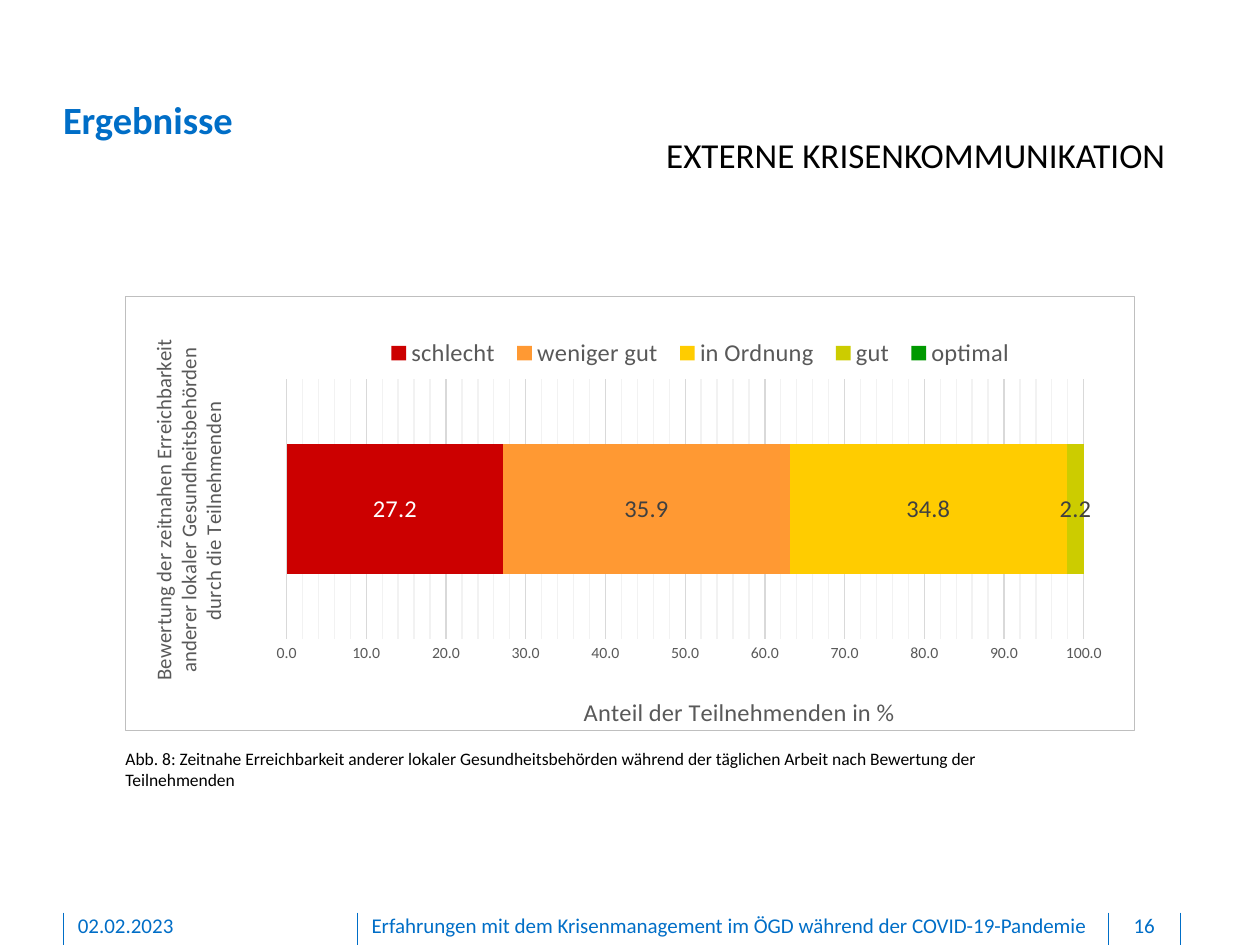
from lxml import etree
from pptx import Presentation
from pptx.chart.data import CategoryChartData
from pptx.dml.color import RGBColor
from pptx.enum import chart as ch, shapes, text
from pptx.oxml import ns
from pptx.util import Cm, Pt

FONT = "Calibri"
COLORS = {
    "blue": "006EC7", "black": "000000", "white": "FFFFFF",
    "label": "404040", "axis": "595959", "border": "BFBFBF",
    "grid": "D9D9D9", "minor": "F2F2F2",
}
# Name, value, bar colour, label colour
RATINGS = [
    ("schlecht", 27.2, "CC0000", "white"),
    ("weniger gut", 35.9, "FF9933", "label"),
    ("in Ordnung", 34.8, "FFCC00", "label"),
    ("gut", 2.2, "CCCC00", "label"),
    ("optimal", 0, "009900", None),
]


def rgb(name):
    return RGBColor.from_string(COLORS.get(name, name))


def set_font(font, size, color, bold=False):
    font.name, font.size, font.bold = FONT, Pt(size), bold
    font.color.rgb = rgb(color)


def fill_frame(tf, content, size, color, align=text.PP_ALIGN.LEFT, bold=False):
    tf.word_wrap = True
    tf.vertical_anchor = text.MSO_ANCHOR.TOP
    tf.text = content
    for p in tf.paragraphs:
        p.alignment = align
        for r in p.runs:
            set_font(r.font, size, color, bold)


def set_margins(tf, bottom=0):
    tf.margin_left = tf.margin_top = tf.margin_right = 0
    tf.margin_bottom = Cm(bottom)


def add_text(s, box, content, size, color, align=text.PP_ALIGN.LEFT):
    tf = s.shapes.add_textbox(*map(Cm, box)).text_frame
    fill_frame(tf, content, size, color, align)
    return tf


def add_header(s, left, top, width):
    title = s.shapes.title
    title.left, title.top, title.width, title.height = map(Cm, (left, top, width, 0.94))
    set_margins(title.text_frame)
    fill_frame(title.text_frame, "Ergebnisse", 22, "blue", bold=True)
    add_text(s, (left + 7.65, top + 0.63, width - 7.65, 1.12),
             "EXTERNE KRISENKOMMUNIKATION", 20, "black", text.PP_ALIGN.RIGHT)


def add_footer(s, left, top, bottom):
    # Separators
    for dx in (0, 5.94, 21.08, 22.53):
        line = s.shapes.add_connector(shapes.MSO_CONNECTOR.STRAIGHT, Cm(left + dx),
                                      Cm(top), Cm(left + dx), Cm(bottom))
        line.line.color.rgb = rgb("blue")
        line.line.width = Pt(0.5)
        etree.SubElement(line._element.spPr, ns.qn("a:effectLst"))
    # Date, talk title and page number
    for dx, width, content, align in (
        (0.3, 5.16, "02.02.2023", text.PP_ALIGN.LEFT),
        (6.22, 14.6, "Erfahrungen mit dem Krisenmanagement im ÖGD während der "
                     "COVID-19-Pandemie", text.PP_ALIGN.LEFT),
        (21.11, 1.37, "16", text.PP_ALIGN.CENTER),
    ):
        tf = add_text(s, (left + dx, top, width, 0.53), content, 12, "blue", align)
        set_margins(tf, 0.13)


def place(element, index, inner=False, **fractions):
    """Give a chart part a manual layout in fractions of the chart."""
    for old in element.findall(ns.qn("c:layout")):
        element.remove(old)
    layout = etree.Element(ns.qn("c:layout"))
    manual = etree.SubElement(layout, ns.qn("c:manualLayout"))
    values = {"layoutTarget": "inner"} if inner else {}
    values.update(xMode="edge", yMode="edge", **fractions)
    for tag, value in values.items():
        etree.SubElement(manual, ns.qn("c:" + tag)).set("val", str(value))
    element.insert(index, layout)


def outline(color):
    """Build the thin line format of a chart part."""
    sp_pr = etree.Element(ns.qn("c:spPr"))
    line = etree.SubElement(sp_pr, ns.qn("a:ln"), w=str(int(Pt(0.75))))
    fill = etree.SubElement(line, ns.qn("a:solidFill"))
    etree.SubElement(fill, ns.qn("a:srgbClr"), val=COLORS[color])
    return sp_pr


def add_axis_title(axis, content, size, x, y, rotation=0):
    tf = axis.axis_title.text_frame
    tf.text = content
    for p in tf.paragraphs:
        set_font(p.font, size, "axis")
        for r in p.runs:
            set_font(r.font, size, "axis")
    tf._txBody.bodyPr.set("rot", str(rotation * 60000))
    place(axis.axis_title._element, 1, x=x, y=y)


def style_axes(chart):
    cat, val = chart.category_axis, chart.value_axis
    for axis in (cat, val):
        axis.major_tick_mark = axis.minor_tick_mark = ch.XL_TICK_MARK.NONE
        axis.format.line.fill.background()
    cat.tick_label_position = ch.XL_TICK_LABEL_POSITION.NONE
    cat.has_major_gridlines = False
    add_axis_title(cat, "Bewertung der zeitnahen Erreichbarkeit\n"
                        "anderer lokaler Gesundheitsbehörden\n"
                        "durch die Teilnehmenden", 12, 0.02, 0.1, -90)

    val.minimum_scale, val.maximum_scale = 0, 100
    val.major_unit, val.minor_unit = 10, 2
    val.has_major_gridlines = val.has_minor_gridlines = True
    for tag, color in (("c:majorGridlines", "grid"), ("c:minorGridlines", "minor")):
        val._element.find(ns.qn(tag)).append(outline(color))
    val.tick_labels.number_format = "0.0"
    val.tick_labels.number_format_is_linked = False
    set_font(val.tick_labels.font, 9, "axis")
    add_axis_title(val, "Anteil der Teilnehmenden in %", 14, 0.45, 0.91)


def style_bars(plot):
    plot.gap_width, plot.overlap = 100, 100
    for series, (_, _, color, label_color) in zip(plot.series, RATINGS):
        series.format.fill.solid()
        series.format.fill.fore_color.rgb = rgb(color)
        series.invert_if_negative = False
        if label_color:
            labels = series.data_labels
            labels.show_value = True
            labels.number_format = "0.0"
            labels.number_format_is_linked = False
            labels.position = ch.XL_LABEL_POSITION.CENTER
            set_font(labels.font, 14, label_color)


def add_figure(s, left, top, width, height):
    data = CategoryChartData(number_format="0.0")
    data.categories = ["1"]
    for name, value, _, _ in RATINGS:
        data.add_series(name, [value])
    box = map(Cm, (left, top, width, height))
    chart = s.shapes.add_chart(ch.XL_CHART_TYPE.BAR_STACKED, *box, data).chart
    chart.has_title = False
    set_font(chart.font, 10, "black")
    style_axes(chart)
    style_bars(chart.plots[0])
    chart._chartSpace.find(ns.qn("c:chart")).addnext(outline("border"))

    # Legend and plot area
    chart.has_legend = True
    chart.legend.position = ch.XL_LEGEND_POSITION.TOP
    chart.legend.include_in_layout = False
    set_font(chart.legend.font, 14, "axis")
    place(chart.legend._element, 1, x=0.25, y=0.09, w=0.64, h=0.08)
    plot_area = chart._chartSpace.find(".//" + ns.qn("c:plotArea"))
    place(plot_area, 0, inner=True, x=0.16, y=0.19, w=0.79, h=0.6)

    # Caption
    add_text(s, (left - 0.23, top + height + 0.13, 19.28, 1.12),
             "Abb. 8: Zeitnahe Erreichbarkeit anderer lokaler Gesundheitsbehörden "
             "während der täglichen Arbeit nach Bewertung der Teilnehmenden", 10, "black")


def main():
    prs = Presentation()
    prs.slide_width, prs.slide_height = Cm(25.4), Cm(19.05)
    s = prs.slides.add_slide(prs.slide_layouts[5])
    add_footer(s, 1.27, 18.4, 19.05)
    add_header(s, 1.27, 1.93, 22.48)
    add_figure(s, 2.51, 5.97, 20.37, 8.86)
    prs.save("out.pptx")


if __name__ == "__main__":
    main()
